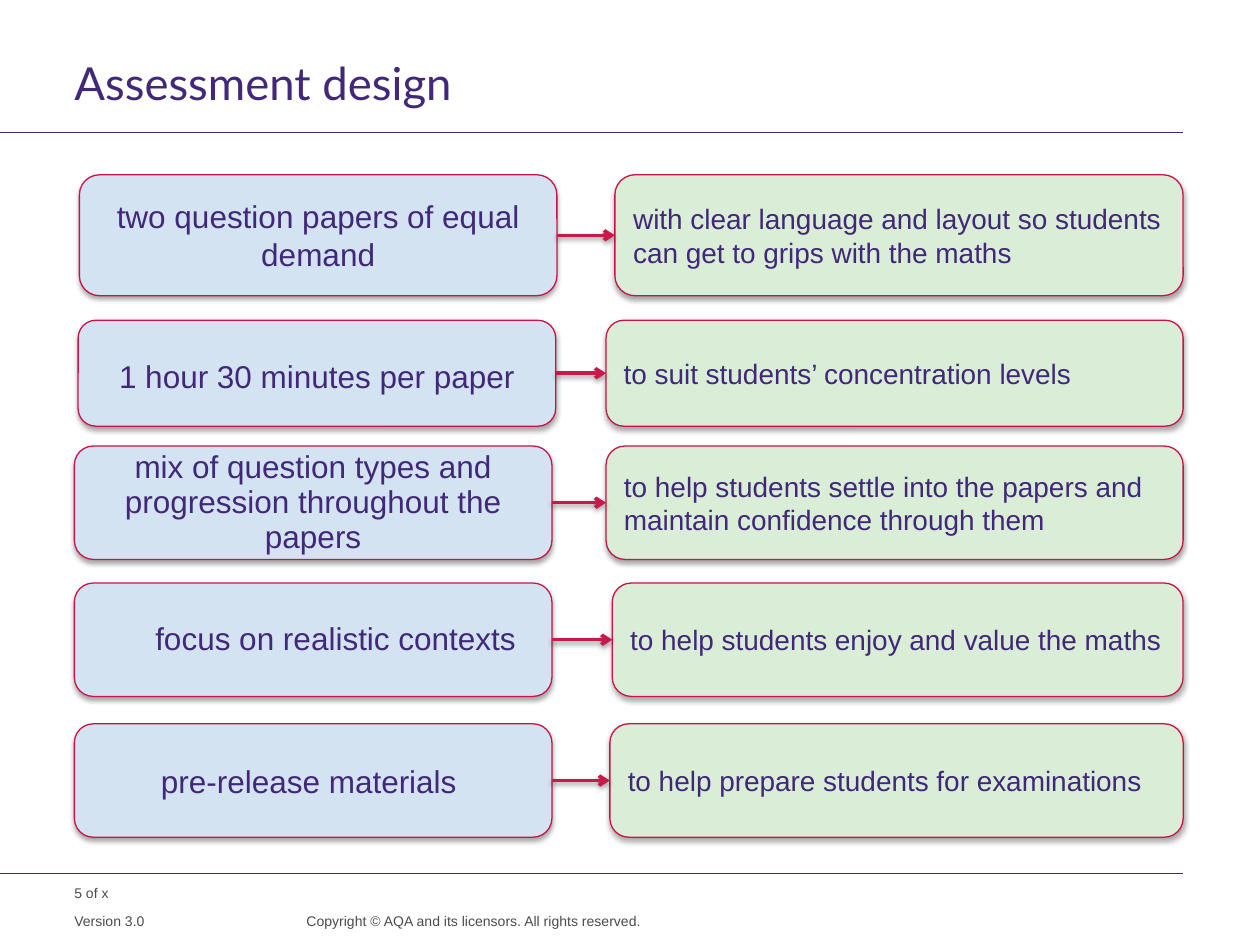
from lxml import etree
from pptx import Presentation, util as u
from pptx.dml.color import RGBColor
from pptx.enum import shapes, text
from pptx.oxml import parse_xml
from pptx.oxml.ns import nsdecls, qn

C = {"purple": "412878", "grey": "4B4B4B", "blue": "D3E3F2", "green": "D9EDD7",
     "edge": "C81448", "arrow": "C8194B"}
LEFT, CENTER, RIGHT = text.PP_ALIGN.LEFT, text.PP_ALIGN.CENTER, text.PP_ALIGN.RIGHT

prs = Presentation()
prs.slide_width, prs.slide_height = u.Inches(10), u.Inches(7.5)
COL, ROW = prs.slide_width / 100, prs.slide_height / 100
s = prs.slides.add_slide(prs.slide_layouts[6])


def write(sp, words, size, color, align=LEFT, spacing=None, font="Arial"):
    tf = sp.text_frame
    tf.word_wrap = True
    tf.text = words
    p = tf.paragraphs[0]
    p.alignment = align
    p.line_spacing = spacing
    f = p.runs[0].font
    f.name, f.size, f.color.rgb = font, u.Pt(size), RGBColor.from_string(C[color])
    return p


def outline(sp, color, width, blur=None, dist=0, alpha=0):
    sp.line.color.rgb = RGBColor.from_string(C[color])
    sp.line.width = u.Pt(width)
    fx = etree.SubElement(sp._element.spPr, qn("a:effectLst"))
    if blur:
        fx.append(parse_xml(
            f'<a:outerShdw {nsdecls("a")} blurRad="{u.Pt(blur)}" dist="{u.Pt(dist)}" '
            f'dir="5400000" rotWithShape="0"><a:srgbClr val="000000">'
            f'<a:alpha val="{alpha * 1000}"/></a:srgbClr></a:outerShdw>'))


for y in (14, 92.4):
    rule = s.shapes.add_connector(shapes.MSO_CONNECTOR.STRAIGHT, 0, int(y * ROW),
                                  int(93.9 * COL), int(y * ROW))
    outline(rule, "purple", 0.6)

labels = [
    (5.9, 6.4, 88, 6.3, "Assessment design", 26, "purple", LEFT, u.Pt(28), "Lato"),
    (5.9, 93.6, 15.7, 1.9, "5 of x", 8, "grey", LEFT, None, "Arial"),
    (5.9, 96.5, 14.7, 1.7, "Version 3.0", 8, "grey", LEFT, u.Pt(10), "Arial"),
    (21.6, 96.5, 29.3, 3.5, "Copyright © AQA and its licensors. All rights reserved.",
     8, "grey", RIGHT, u.Pt(10), "Arial"),
]
for x, y, w, h, *style in labels:
    sp = s.shapes.add_textbox(int(x * COL), int(y * ROW), int(w * COL), int(h * ROW))
    tf = sp.text_frame
    tf.margin_left = tf.margin_right = tf.margin_top = tf.margin_bottom = 0
    write(sp, *style)

pairs = [
    (18.5, 12.8, 6.3, 48.8, "two question papers of equal demand", CENTER, None,
     "with clear language and layout so students can get to grips with the maths"),
    (33.9, 11.2, 6.2, 48.1, "1 hour 30 minutes per paper", CENTER, 1.15,
     "to suit students’ concentration levels"),
    (47.2, 12, 5.9, 48.1, "mix of question types and progression throughout the papers",
     CENTER, u.Pt(20),
     "to help students settle into the papers and maintain confidence through them"),
    (61.7, 12, 5.9, 48.6, "focus on realistic contexts", LEFT, u.Pt(20),
     "to help students enjoy and value the maths"),
    (76.6, 12, 5.9, 48.4, "pre-release materials ", CENTER, None,
     "to help prepare students for examinations"),
]
for y, h, x1, x2, feature, align, spacing, reason in pairs:
    for x, w, fill, words, size, al, ls in (
            (x1, 37.9, "blue", feature, 18, align, spacing),
            (x2, 93.9 - x2, "green", reason, 16, LEFT, None)):
        sp = s.shapes.add_shape(shapes.MSO_SHAPE.FLOWCHART_ALTERNATE_PROCESS,
                                int(x * COL), int(y * ROW), int(w * COL), int(h * ROW))
        sp.fill.solid()
        sp.fill.fore_color.rgb = RGBColor.from_string(C[fill])
        outline(sp, "edge", 0.75, 3.1, 1.8, 35)
        sp.text_frame.vertical_anchor = text.MSO_ANCHOR.MIDDLE
        p = write(sp, words, size, "purple", al, ls)
        if words == "focus on realistic contexts":
            p._p.get_or_add_pPr().set("marL", str(u.Inches(0.5)))
    mid = int((y + h / 2) * ROW)
    arrow = s.shapes.add_connector(shapes.MSO_CONNECTOR.STRAIGHT,
                                   int((x1 + 37.9) * COL), mid, int(x2 * COL), mid)
    outline(arrow, "arrow", 2, 3.1, 1.6, 38)
    etree.SubElement(arrow.line._get_or_add_ln(), qn("a:tailEnd"), type="arrow")

prs.save("out.pptx")
